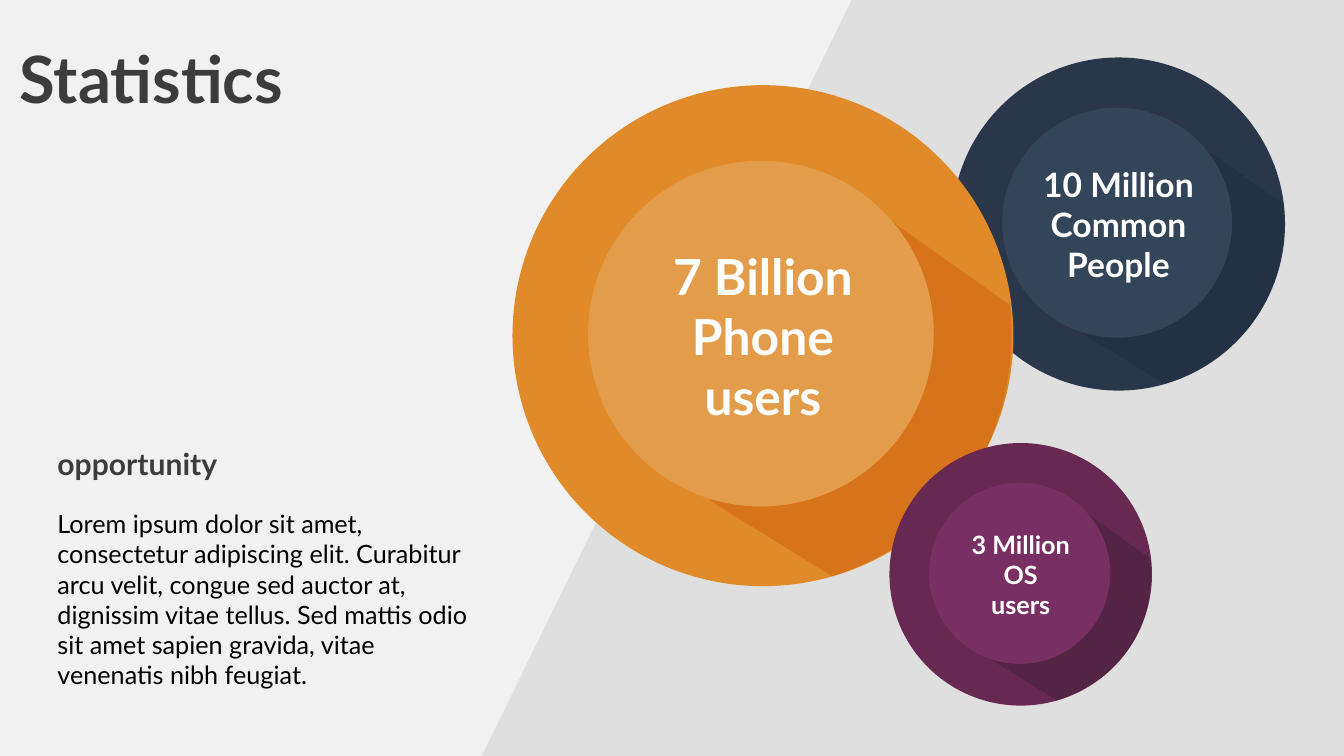
from pptx import Presentation
from pptx.dml.color import RGBColor
from pptx.enum.shapes import MSO_SHAPE
from pptx.enum.text import MSO_ANCHOR, MSO_AUTO_SIZE, PP_ALIGN
from pptx.util import Inches, Pt

OVAL = MSO_SHAPE.OVAL
MIDDLE = MSO_ANCHOR.MIDDLE
FIT_SHAPE = MSO_AUTO_SIZE.SHAPE_TO_FIT_TEXT
LEFT, CENTER = PP_ALIGN.LEFT, PP_ALIGN.CENTER

WIDTH, HEIGHT = 26.67, 15
FONT = "Lato"
COLORS = {
    "background": "F1F1F1", "backdrop": "DFDFDF",
    "heading": "3C3C3C", "body": "000000", "label": "FFFFFF",
    "navy": "2A364A", "navy shadow": "223244", "navy core": "334659",
    "orange": "E08A29", "orange shadow": "D6731B", "orange core": "E39D4A",
    "purple": "672952", "purple shadow": "542444", "purple core": "782F63",
}

BASE_DIAMETER = 9.94
CORE_OFFSET, CORE_DIAMETER = 1.5, 6.86
SHADOW_START, SHADOW_TIP = (3.91, 8.24), (7.48, 2.67)
SHADOW_CURVE = [(6.34, 9.74), (6.34, 9.74), (10.22, 8.74), (9.88, 4.37)]
CURVE_STEPS = 32
LINE_SPACING = 1.2

BODY = (
    "Lorem ipsum dolor sit amet, consectetur adipiscing elit. Curabitur arcu velit, "
    "congue sed auctor at, dignissim vitae tellus. Sed mattis odio sit amet sapien "
    "gravida, vitae venenatis nibh feugiat."
)
BUBBLES = [
    ("navy", 18.89, 1.14, 6.61, 48, 3.07, ["10 Million", "Common", "People"]),
    ("orange", 10.17, 1.69, 9.94, 71, 3.87, ["7 Billion", "Phone", "users"]),
    ("purple", 17.65, 8.79, 5.21, 36, 2.02, ["3 Million", "OS", "users"]),
]


def color(name):
    return RGBColor.from_string(COLORS[name])


def curve_points(controls):
    start, first, second, end = controls
    points = []
    for step in range(CURVE_STEPS + 1):
        t = step / CURVE_STEPS
        u = 1 - t
        points.append(tuple(
            u**3 * a + 3 * u**2 * t * b + 3 * u * t**2 * c + t**3 * d
            for a, b, c, d in zip(start, first, second, end)
        ))
    return points


class StatisticsSlide:
    def __init__(self, deck):
        self.slide = deck.slides.add_slide(deck.slide_layouts[6])
        fill = self.slide.background.fill
        fill.solid()
        fill.fore_color.rgb = color("background")
        self.shapes = self.slide.shapes

    def paint(self, shape, fill):
        shape.shadow.inherit = False
        shape.fill.solid()
        shape.fill.fore_color.rgb = color(fill)
        shape.line.fill.background()

    def circle(self, shapes, left, top, diameter, fill):
        shape = shapes.add_shape(
            OVAL, Inches(left), Inches(top), Inches(diameter), Inches(diameter))
        self.paint(shape, fill)

    def outline(self, shapes, points, fill):
        corners = [(Inches(x), Inches(y)) for x, y in points]
        builder = shapes.build_freeform(*corners[0])
        builder.add_line_segments(corners[1:], close=True)
        self.paint(builder.convert_to_shape(), fill)

    def text(self, shapes, bounds, lines, size, fill, bold=False, align=LEFT, wrap=True):
        box = shapes.add_textbox(*[Inches(length) for length in bounds])
        frame = box.text_frame
        frame.margin_left = frame.margin_right = 0
        frame.margin_top = frame.margin_bottom = 0
        frame.vertical_anchor = MIDDLE
        frame.word_wrap = wrap
        if not wrap:
            frame.auto_size = FIT_SHAPE
        for index, line in enumerate(lines):
            para = frame.add_paragraph() if index else frame.paragraphs[0]
            para.alignment = align
            span = para.add_run()
            span.text = line
            span.font.name = FONT
            span.font.size = Pt(size)
            span.font.bold = bold
            span.font.color.rgb = color(fill)

    def bubble(self, hue, left, top, diameter, size, label_width, lines):
        shapes = self.shapes.add_group_shape().shapes
        scale = diameter / BASE_DIAMETER
        shadow = [SHADOW_START, *curve_points(SHADOW_CURVE), SHADOW_TIP]
        offset = CORE_OFFSET * scale
        label_height = len(lines) * size * LINE_SPACING / 72
        label = (left + (diameter - label_width) / 2,
                 top + (diameter - label_height) / 2, label_width, label_height)

        self.circle(shapes, left, top, diameter, hue)
        self.outline(
            shapes, [(left + x * scale, top + y * scale) for x, y in shadow], f"{hue} shadow")
        self.circle(shapes, left + offset, top + offset, CORE_DIAMETER * scale, f"{hue} core")
        self.text(shapes, label, lines, size, "label", bold=True, align=CENTER, wrap=False)


def main():
    deck = Presentation()
    deck.slide_width, deck.slide_height = Inches(WIDTH), Inches(HEIGHT)
    page = StatisticsSlide(deck)
    page.outline(
        page.shapes, [(16.9, 0), (WIDTH, 0), (WIDTH, HEIGHT), (9.56, HEIGHT)], "backdrop")
    page.text(page.shapes, (1.14, 8.79, 8.03, 0.83), ["opportunity"], 43, "heading", bold=True)
    page.text(page.shapes, (0.39, 0.72, 15.75, 1.65), ["Statistics"], 93, "heading", bold=True)
    page.text(page.shapes, (1.14, 10, 8.28, 3.78), [BODY], 36, "body")
    for bubble in BUBBLES:
        page.bubble(*bubble)
    deck.save("out.pptx")


if __name__ == "__main__":
    main()
